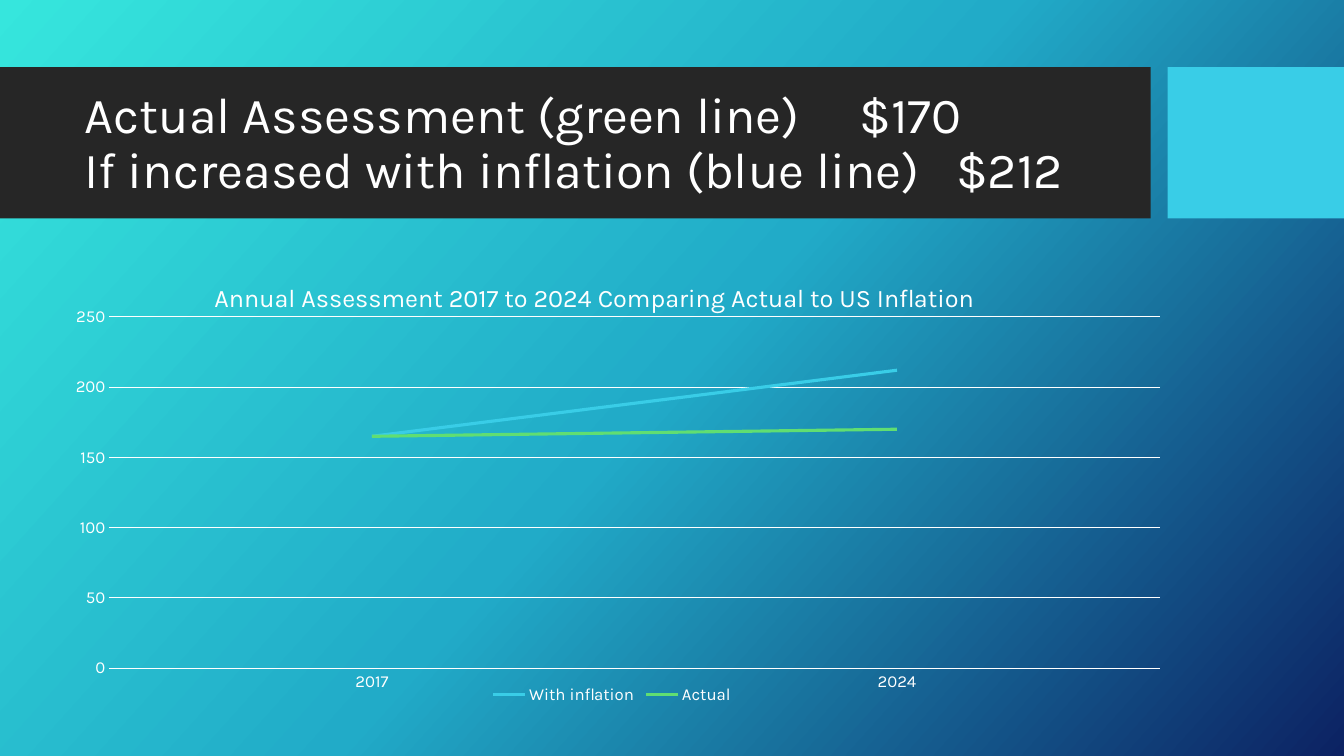
from lxml.etree import SubElement
from pptx import Presentation
from pptx.chart.data import CategoryChartData
from pptx.dml.color import RGBColor
from pptx.enum.chart import XL_CHART_TYPE as ChartType
from pptx.enum.chart import XL_LEGEND_POSITION as LegendPosition
from pptx.enum.chart import XL_TICK_MARK as TickMark
from pptx.enum.shapes import MSO_SHAPE as Shape
from pptx.enum.text import MSO_ANCHOR as Anchor
from pptx.enum.text import MSO_AUTO_SIZE as AutoSize
from pptx.enum.text import PP_ALIGN as Align
from pptx.oxml import parse_xml
from pptx.oxml.ns import nsdecls, qn
from pptx.util import Pt

PX = 9525  # EMU per pixel, 96 pixels to the inch
FONT = "Karla"
WHITE = RGBColor(0xFF, 0xFF, 0xFF)
CHARCOAL = RGBColor(0x26, 0x26, 0x26)
SKY = RGBColor(0x39, 0xCD, 0xE7)
GREEN = RGBColor(0x60, 0xDE, 0x72)
TURQUOISE = RGBColor(0x36, 0xE6, 0xDD)
TEAL = RGBColor(0x21, 0xAB, 0xC8)
NAVY = RGBColor(0x0C, 0x22, 0x63)


def px(*lengths):
    return [length * PX for length in lengths]


def style_font(font, size):
    font.name = FONT
    font.size = Pt(size)
    font.bold = False
    font.color.rgb = WHITE


def set_gradient_background(slide, stops, angle):
    stop_xml = "".join(
        f'<a:gs pos="{percent * 1000}"><a:srgbClr val="{color}"/></a:gs>'
        for percent, color in stops)
    background = parse_xml(
        f'<p:bg {nsdecls("p", "a")}><p:bgPr><a:gradFill rotWithShape="1">'
        f'<a:gsLst>{stop_xml}</a:gsLst>'
        f'<a:lin ang="{angle * 60000}" scaled="0"/></a:gradFill>'
        '<a:effectLst/></p:bgPr></p:bg>')
    slide._element.cSld.insert(0, background)


def add_band(slide, left, width, color):
    band = slide.shapes.add_shape(Shape.RECTANGLE, *px(left, 64, width, 144))
    band.shadow.inherit = False
    band.fill.solid()
    band.fill.fore_color.rgb = color
    band.line.fill.background()
    # Bands lie behind the title placeholder
    slide.shapes._spTree.insert(2, band._element)


def set_title(slide, text, tab_stops):
    title = slide.shapes.title
    title.left, title.top, title.width, title.height = px(71, 72, 1009, 132)
    text_frame = title.text_frame
    text_frame.text = text
    text_frame.word_wrap = True
    text_frame.auto_size = AutoSize.NONE
    text_frame.vertical_anchor = Anchor.MIDDLE
    paragraph = text_frame.paragraphs[0]
    paragraph.alignment = Align.LEFT
    paragraph.line_spacing = 0.9
    tab_list = SubElement(paragraph._p.get_or_add_pPr(), qn("a:tabLst"))
    for position in px(*tab_stops):
        SubElement(tab_list, qn("a:tab"), pos=str(position), algn="l")
    for run in paragraph.runs:
        style_font(run.font, 36)


def manual_layout(target="", **fractions):
    inner = f'<c:layoutTarget val="{target}"/>' if target else ""
    modes = "".join(f'<c:{key}Mode val="edge"/>' for key in "xy")
    places = "".join(f'<c:{key} val="{value}"/>' for key, value in fractions.items())
    return parse_xml(f'<c:layout {nsdecls("c")}><c:manualLayout>'
                     f'{inner}{modes}{places}</c:manualLayout></c:layout>')


def replace_layout(parent, layout, index):
    for old in parent.findall(qn("c:layout")):
        parent.remove(old)
    parent.insert(index, layout)


def style_axis(axis):
    axis.major_tick_mark = axis.minor_tick_mark = TickMark.NONE
    style_font(axis.tick_labels.font, 12)


def style_line(line, color, width):
    line.color.rgb = color
    line.width = Pt(width)


def add_line_chart(slide, title, categories, series_rows):
    data = CategoryChartData()
    data.categories = categories
    for name, values, _ in series_rows:
        data.add_series(name, values)
    chart = slide.shapes.add_chart(
        ChartType.LINE, *px(51, 246, 1064, 429), data).chart
    style_font(chart.font, 10)

    # Title and plot area
    chart.has_title = True
    title_frame = chart.chart_title.text_frame
    title_frame.text = title
    style_font(title_frame.paragraphs[0].runs[0].font, 18)
    replace_layout(chart.chart_title._element, manual_layout(x=0.14, y=0.04), 1)
    plot_area = chart._chartSpace.chart.plotArea
    replace_layout(plot_area, manual_layout(
        "inner", x=0.05, y=0.13, w=0.94, h=0.78), 0)

    # Axes
    style_axis(chart.category_axis)
    style_line(chart.category_axis.format.line, WHITE, 0.75)
    value_axis = chart.value_axis
    style_axis(value_axis)
    value_axis.minimum_scale, value_axis.maximum_scale = 0, 250
    value_axis.major_unit = 50
    value_axis.format.line.fill.background()
    style_line(value_axis.major_gridlines.format.line, WHITE, 0.75)

    # Legend and series
    chart.has_legend = True
    chart.legend.position = LegendPosition.BOTTOM
    chart.legend.include_in_layout = False
    style_font(chart.legend.font, 12)
    chart.plots[0].vary_by_categories = False
    for series, (_, _, color) in zip(chart.plots[0].series, series_rows):
        series.smooth = False
        style_line(series.format.line, color, 2.25)


def main():
    presentation = Presentation()
    presentation.slide_width, presentation.slide_height = px(1280, 720)
    slide = presentation.slides.add_slide(presentation.slide_layouts[5])

    set_gradient_background(slide, [(0, TURQUOISE), (50, TEAL), (100, NAVY)], 42)
    add_band(slide, 0, 1096, CHARCOAL)
    add_band(slide, 1112, 168, SKY)
    set_title(slide, "Actual Assessment (green line)\t$170\v"
                     "If increased with inflation (blue line)\t$212", [738, 830])
    add_line_chart(
        slide, "Annual Assessment 2017 to 2024 Comparing Actual to US Inflation",
        ["2017", "2024"],
        [("With inflation", (165, 212), SKY), ("Actual", (165, 170), GREEN)])

    presentation.save("out.pptx")


if __name__ == "__main__":
    main()
